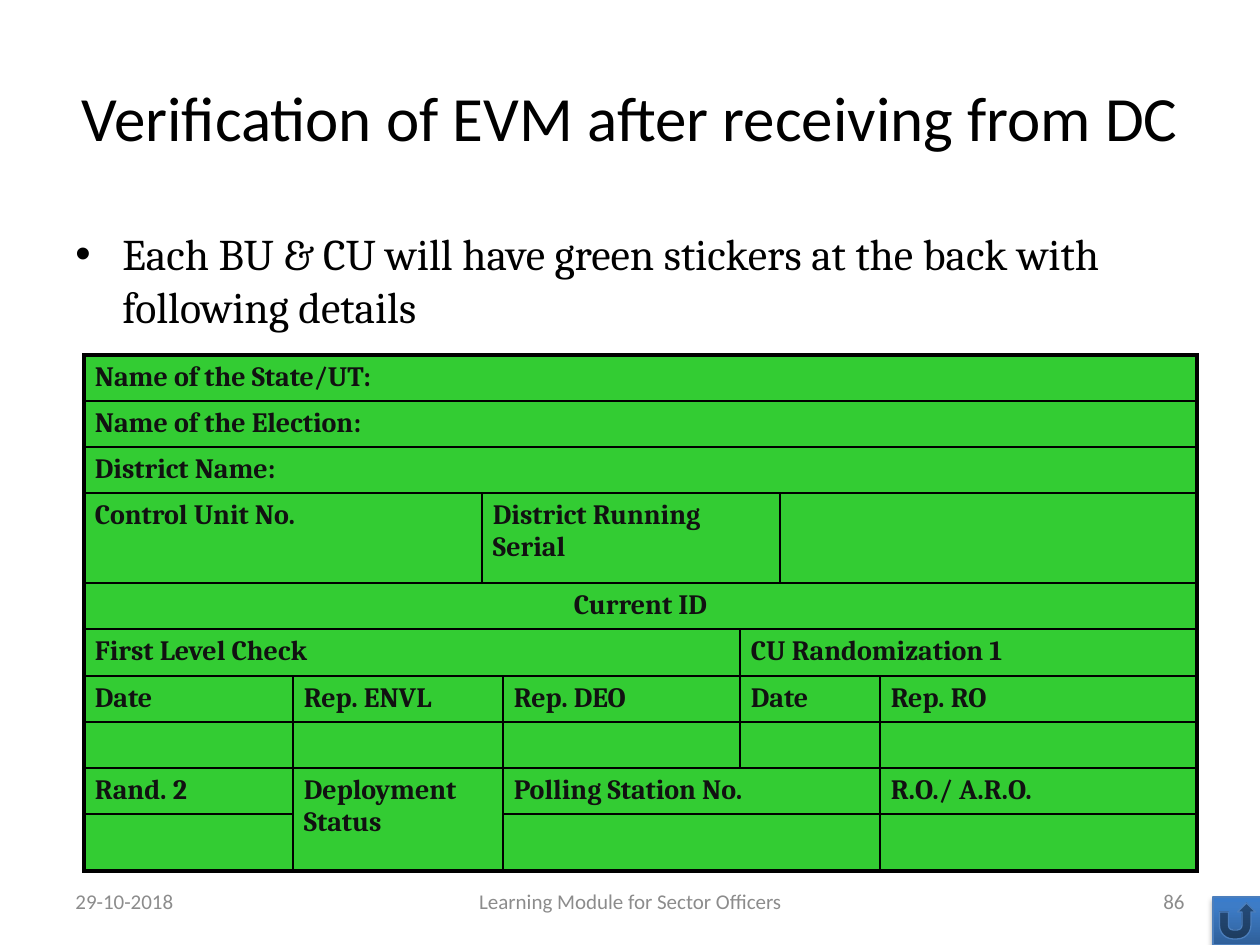
from lxml import etree
from pptx import Presentation
from pptx.dml.color import RGBColor
from pptx.enum.shapes import MSO_SHAPE
from pptx.enum.text import MSO_ANCHOR, PP_ALIGN
from pptx.oxml.ns import qn
from pptx.util import Pt

LEFT, CENTER, RIGHT = PP_ALIGN.LEFT, PP_ALIGN.CENTER, PP_ALIGN.RIGHT
TOP, MIDDLE = MSO_ANCHOR.TOP, MSO_ANCHOR.MIDDLE
RETURN_BUTTON = MSO_SHAPE.ACTION_BUTTON_RETURN

PX_PER_INCH = 126
BLACK, INK, GREY, GREEN = "000000", "111111", "8C8C8C", "33CC33"
THIN, THICK = 1, 2.25

COLUMNS = [209, 189, 21, 237, 40, 100, 317]
ROWS = [46, 46, 46, 90, 46, 47, 46, 46, 46, 57]
# Each sticker field: row, column, row span, column span, text
FIELDS = [
    (0, 0, 1, 7, "Name of the State/UT:"),
    (1, 0, 1, 7, "Name of the Election:"),
    (2, 0, 1, 7, "District Name:"),
    (3, 0, 1, 2, "Control Unit No."),
    (3, 2, 1, 3, "District Running Serial"),
    (3, 5, 1, 2, ""),
    (4, 0, 1, 7, "Current ID"),
    (5, 0, 1, 4, "First Level Check"),
    (5, 4, 1, 3, "CU Randomization 1"),
    (6, 0, 1, 1, "Date"),
    (6, 1, 1, 2, "Rep. ENVL"),
    (6, 3, 1, 1, "Rep. DEO"),
    (6, 4, 1, 2, "Date"),
    (6, 6, 1, 1, "Rep. RO"),
    (7, 0, 1, 1, ""),
    (7, 1, 1, 2, ""),
    (7, 3, 1, 1, ""),
    (7, 4, 1, 2, ""),
    (7, 6, 1, 1, ""),
    (8, 0, 1, 1, "Rand. 2"),
    (8, 1, 2, 2, "Deployment Status"),
    (8, 3, 1, 3, "Polling Station No."),
    (8, 6, 1, 1, "R.O./ A.R.O."),
    (9, 0, 1, 1, ""),
    (9, 3, 1, 3, ""),
    (9, 6, 1, 1, ""),
]


def px(length):
    return round(length * 914400 / PX_PER_INCH)


def rgb(color):
    return RGBColor.from_string(color)


def add_element(parent, tag, **attributes):
    return etree.SubElement(parent, qn(tag), attributes)


def add_color(parent, color):
    return add_element(parent, "a:srgbClr", val=color)


def write(frame, text, size, font, color, align=LEFT, bold=False):
    frame.text = text
    paragraph = frame.paragraphs[0]
    paragraph.alignment = align
    for run in paragraph.runs:
        run.font.size = Pt(size)
        run.font.name = font
        run.font.bold = bold
        run.font.color.rgb = rgb(color)
    return paragraph


def add_title(slide, text):
    title = slide.shapes.title
    title.left, title.top, title.width, title.height = map(px, (63, 38, 1134, 157))
    title.text_frame.vertical_anchor = MIDDLE
    write(title.text_frame, text, 36, "Calibri", BLACK, CENTER)


def add_text(slide, box, text, size, font, color, align=LEFT, anchor=MIDDLE):
    frame = slide.shapes.add_textbox(*map(px, box)).text_frame
    frame.word_wrap = True
    frame.vertical_anchor = anchor
    return write(frame, text, size, font, color, align)


def add_bullet(paragraph, indent):
    properties = paragraph._p.get_or_add_pPr()
    properties.set("marL", str(px(indent)))
    properties.set("indent", str(-px(indent)))
    add_element(properties, "a:buFont", typeface="Arial")
    add_element(properties, "a:buChar", char="•")


def set_borders(cell, widths):
    properties = cell._tc.get_or_add_tcPr()
    for side, width in zip("LRTB", widths):
        line = add_element(properties, f"a:ln{side}", w=str(Pt(width)))
        add_color(add_element(line, "a:solidFill"), BLACK)


def fill_field(table, row, column, row_span, column_span, text):
    last_row, last_column = row + row_span - 1, column + column_span - 1
    outer = (column == 0, last_column == len(COLUMNS) - 1,
             row == 0, last_row == len(ROWS) - 1)
    widths = [THICK if is_outer else THIN for is_outer in outer]
    for r in range(row, last_row + 1):
        for c in range(column, last_column + 1):
            cell = table.cell(r, c)
            set_borders(cell, widths)
            cell.fill.solid()
            cell.fill.fore_color.rgb = rgb(GREEN)
            # Empty cells keep the text size so that rows do not grow
            end = add_element(cell.text_frame.paragraphs[0]._p,
                              "a:endParaRPr", sz="1600")
            add_element(end, "a:latin", typeface="Cambria")
    field = table.cell(row, column)
    if row_span * column_span > 1:
        field.merge(table.cell(last_row, last_column))
    field.margin_left = field.margin_right = px(11)
    field.margin_top = field.margin_bottom = px(6)
    if text:
        align = CENTER if text == "Current ID" else LEFT
        write(field.text_frame, text, 16, "Cambria", INK, align, bold=True)


def add_sticker(slide):
    box = map(px, (84, 355, sum(COLUMNS), sum(ROWS)))
    table = slide.shapes.add_table(len(ROWS), len(COLUMNS), *box).table
    table.first_row = table.horz_banding = False
    for column, width in zip(table.columns, COLUMNS):
        column.width = px(width)
    for row, height in zip(table.rows, ROWS):
        row.height = px(height)
    for field in FIELDS:
        fill_field(table, *field)


def add_return_button(slide):
    button = slide.shapes.add_shape(RETURN_BUTTON, *map(px, (1213, 897, 49, 48)))
    button.line.color.rgb = rgb("4B7EBC")
    button.line.width = Pt(0.75)
    # Gradient from dark at the bottom to light at the top
    button.fill.gradient()
    button.fill.gradient_angle = 90
    properties = button._element.spPr
    stops = properties.find(".//" + qn("a:gsLst"))
    stops.clear()
    for position, color in ((0, "2F5F99"), (80, "3D7CC7"), (100, "3A7CCB")):
        add_color(add_element(stops, "a:gs", pos=str(position * 1000)), color)
    # Soft shadow below
    button.shadow.inherit = False
    shadow = add_element(properties.find(qn("a:effectLst")), "a:outerShdw",
                         blurRad=str(Pt(3.1)), dist=str(Pt(1.8)),
                         dir="5400000", rotWithShape="0")
    add_element(add_color(shadow, BLACK), "a:alpha", val="35000")


def main():
    presentation = Presentation()
    presentation.slide_width, presentation.slide_height = px(1260), px(945)
    slide = presentation.slides.add_slide(presentation.slide_layouts[5])

    # Heading and introduction
    add_title(slide, "Verification of EVM after receiving from DC")
    intro = add_text(
        slide, (63, 221, 1134, 624),
        "Each BU & CU will have green stickers at the back with following details",
        25, "Cambria", BLACK, anchor=TOP)
    add_bullet(intro, 47)

    # Footer
    for left, width, text, align in (
            (63, 294, "29-10-2018", LEFT),
            (431, 399, "Learning Module for Sector Officers", CENTER),
            (903, 294, "86", RIGHT)):
        add_text(slide, (left, 876, width, 50), text, 12, "Calibri", GREY, align)

    # Sticker and navigation
    add_sticker(slide)
    add_return_button(slide)
    presentation.save("out.pptx")


if __name__ == "__main__":
    main()
